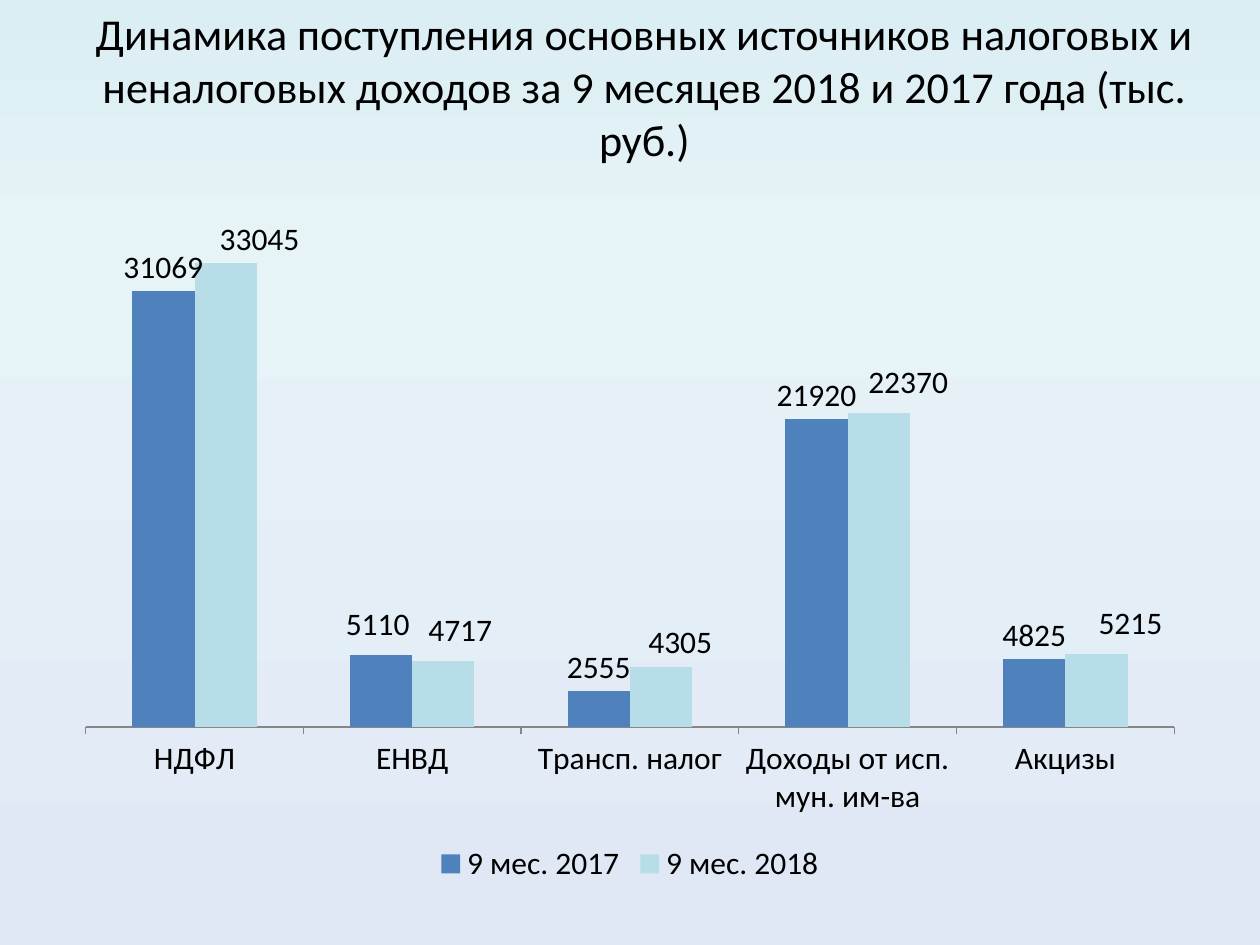
from copy import deepcopy
from dataclasses import dataclass

from lxml.etree import SubElement
from pptx import Presentation
from pptx.chart.data import CategoryChartData as ChartData
from pptx.dml.color import RGBColor as Color
from pptx.enum.chart import XL_CHART_TYPE as ChartType
from pptx.enum.chart import XL_LABEL_POSITION as LabelSpot
from pptx.enum.chart import XL_LEGEND_POSITION as LegendSpot
from pptx.enum.chart import XL_TICK_MARK as Tick
from pptx.enum.text import MSO_ANCHOR as Anchor
from pptx.enum.text import PP_ALIGN as Align
from pptx.oxml.ns import qn
from pptx.util import Inches, Pt


@dataclass(frozen=True)
class Theme:
    """Colours, typeface and type sizes of the slide."""
    font: str = "Calibri"
    title_size: float = 25.2
    chart_size: float = 18
    text: str = "000000"
    axis: str = "868686"
    bars: tuple = ("4F81BD", "B7DEE8")
    backdrop: tuple = ((0, "DBEEF4"), (0.25, "E6F3F7"), (1, "E1E8F5"))


THEME = Theme()
WIDTH, HEIGHT = Inches(10), Inches(7.5)
TITLE = ("Динамика поступления основных источников налоговых и неналоговых "
         "доходов за 9 месяцев 2018 и 2017 года (тыс. руб.)")
CATEGORIES = ("НДФЛ", "ЕНВД", "Трансп. налог", "Доходы от исп. мун. им-ва", "Акцизы")
REVENUES = {
    "9 мес. 2017": (31069, 5110, 2555, 21920, 4825),
    "9 мес. 2018": (33045, 4717, 4305, 22370, 5215),
}
LABEL_SHIFTS = (
    {1: (-0.003, -0.01)},
    {0: (0.03, 0), 1: (0.015, -0.01), 2: (0.017, 0), 3: (0.026, -0.01), 4: (0.03, -0.01)},
)


def share_box(left, top, width, height):
    """Turn shares of the slide's size into a box of lengths."""
    return (int(left * WIDTH), int(top * HEIGHT), int(width * WIDTH), int(height * HEIGHT))


def style_font(font, *, size, color=THEME.text, name=THEME.font):
    """Set the typeface, size and colour of a font."""
    font.name, font.size, font.bold = name, Pt(size), False
    font.color.rgb = Color.from_string(color)


def add_text(page, box, text, *, size, align=Align.CENTER, anchor=Anchor.MIDDLE):
    """Place a wrapped line of text in a box."""
    frame = page.shapes.add_textbox(*box).text_frame
    frame.word_wrap, frame.vertical_anchor = True, anchor
    para = frame.paragraphs[0]
    para.alignment = align
    span = para.add_run()
    span.text = text
    style_font(span.font, size=size)


def paint_backdrop(page):
    """Fill the background with a gradient running downwards."""
    fill = page.background.fill
    fill.gradient()
    fill.gradient_angle = 270
    stop_list = next(page.element.iter(qn("a:gsLst")))
    stop_list.insert(1, deepcopy(stop_list[0]))
    for stop, (position, color) in zip(fill.gradient_stops, THEME.backdrop):
        stop.position = position
        stop.color.rgb = Color.from_string(color)


def set_layout(parent, index, **settings):
    """Give a chart part a manual layout as its child at an index."""
    for old in parent.findall(qn("c:layout")):
        parent.remove(old)
    layout = SubElement(parent, qn("c:layout"))
    parent.insert(index, layout)
    manual = SubElement(layout, qn("c:manualLayout"))
    for key, value in settings.items():
        SubElement(manual, qn(f"c:{key}")).set("val", str(value))


def style_series(series, color, shifts):
    """Colour a series and place its value labels."""
    series.format.fill.solid()
    series.format.fill.fore_color.rgb = Color.from_string(color)
    labels = series.data_labels
    labels.show_value, labels.position = True, LabelSpot.OUTSIDE_END
    style_font(labels.font, size=THEME.chart_size)
    for index, (across, down) in shifts.items():
        label = series.points[index].data_label
        style_font(label.font, size=THEME.chart_size)
        label.position = LabelSpot.OUTSIDE_END
    for element in labels._element.findall(qn("c:dLbl")):
        across, down = shifts[int(element.find(qn("c:idx")).get("val"))]
        set_layout(element, 1, x=across, y=down)


def style_axes(chart):
    """Show a plain category axis and hide the value axis."""
    values, categories = chart.value_axis, chart.category_axis
    values.visible = values.has_major_gridlines = False
    values.minimum_scale, values.maximum_scale = 0, 35000
    categories.major_tick_mark = Tick.OUTSIDE
    categories.format.line.color.rgb = Color.from_string(THEME.axis)
    categories.format.line.width = Pt(0.75)


def add_revenue_chart(page, box):
    """Place the clustered columns of revenue in a box."""
    data = ChartData()
    data.categories = CATEGORIES
    for name, amounts in REVENUES.items():
        data.add_series(name, amounts)
    chart = page.shapes.add_chart(ChartType.COLUMN_CLUSTERED, *box, data).chart
    style_font(chart.font, size=THEME.chart_size)
    chart.has_title = False
    chart.has_legend = True
    chart.legend.position, chart.legend.include_in_layout = LegendSpot.BOTTOM, False
    style_axes(chart)
    plot = chart.plots[0]
    plot.gap_width, plot.overlap, plot.vary_by_categories = 150, 0, False
    for series, color, shifts in zip(plot.series, THEME.bars, LABEL_SHIFTS):
        style_series(series, color, shifts)
    area = next(chart.element.iter(qn("c:plotArea")))
    set_layout(area, 0, layoutTarget="inner", xMode="edge", yMode="edge",
               x=0.02, y=0.02, w=0.96, h=0.737)


def main():
    """Build the deck and save it."""
    deck = Presentation()
    deck.slide_width, deck.slide_height = WIDTH, HEIGHT
    page = deck.slides.add_slide(deck.slide_layouts[6])
    paint_backdrop(page)
    add_text(page, share_box(0.035, 0.017, 0.953, 0.147), TITLE, size=THEME.title_size)
    add_revenue_chart(page, share_box(0.05, 0.233, 0.9, 0.708))
    deck.save("out.pptx")


if __name__ == "__main__":
    main()
